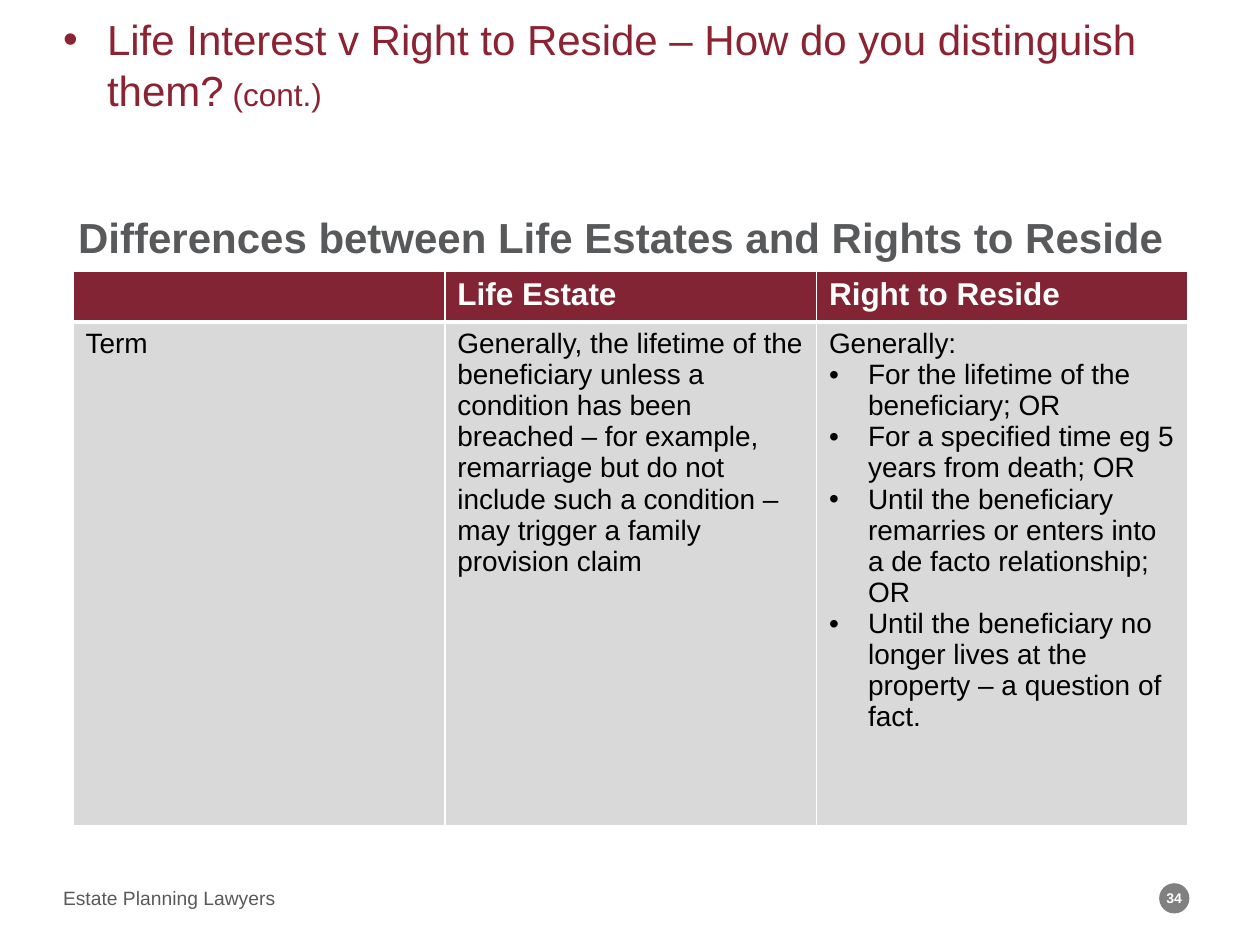
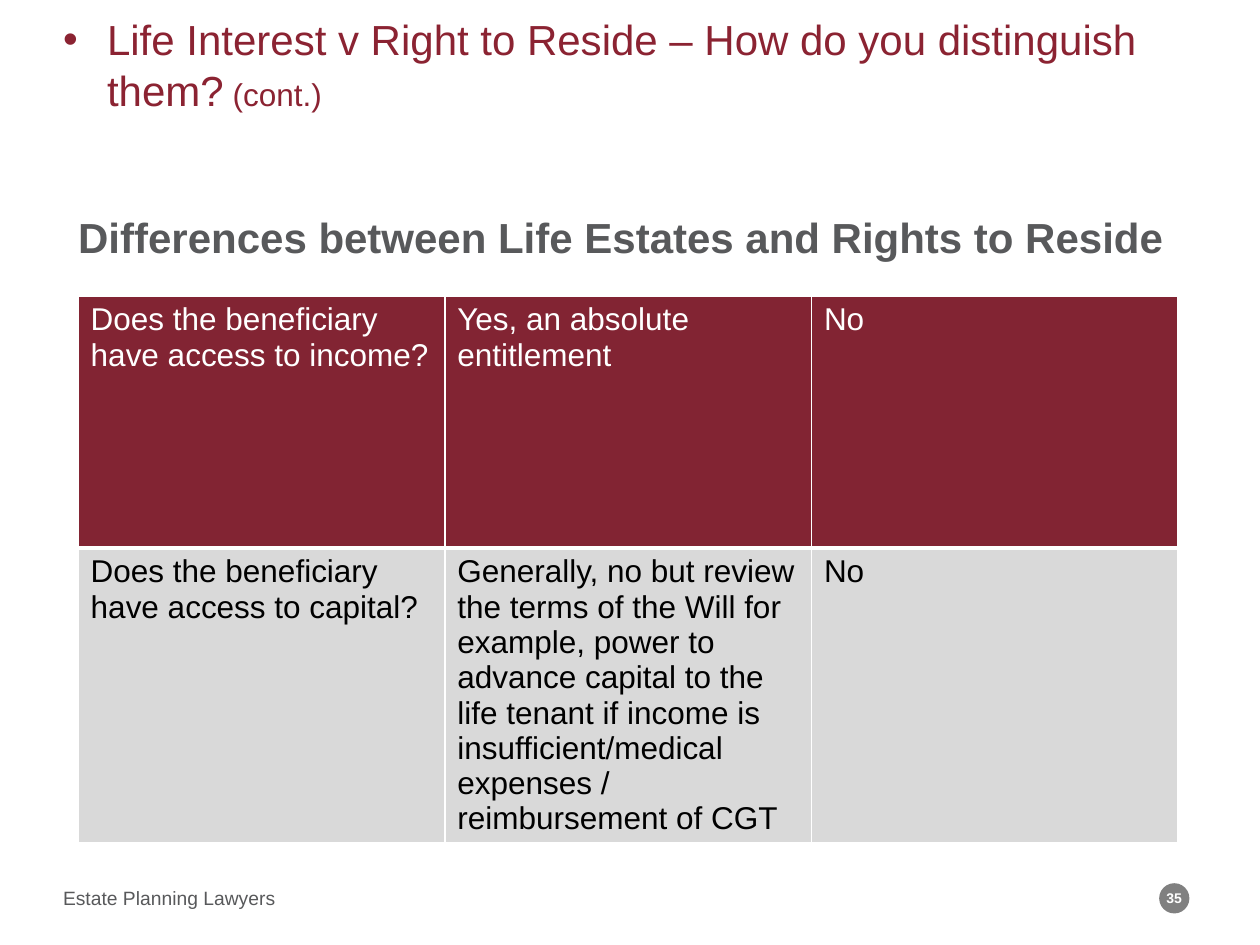
from lxml import etree
from pptx import Presentation
from pptx.dml.color import RGBColor
from pptx.enum.shapes import MSO_SHAPE
from pptx.enum.text import MSO_ANCHOR, MSO_AUTO_SIZE, PP_ALIGN
from pptx.oxml.ns import qn
from pptx.util import Inches, Pt

OVAL = MSO_SHAPE.OVAL
TOP, MIDDLE, BOTTOM = MSO_ANCHOR.TOP, MSO_ANCHOR.MIDDLE, MSO_ANCHOR.BOTTOM
FIXED = MSO_AUTO_SIZE.NONE
LEFT, CENTER = PP_ALIGN.LEFT, PP_ALIGN.CENTER

FONT = "Arial"
INK = {
    "title": "8B2332", "text": "58595B", "badge": "808080",
    "head": "822433", "row": "D9D9D9", "white": "FFFFFF", "black": "000000",
}


def write(frame, lines, size, ink, bold=False, tail=(), left=0, hang=0,
          start=0, align=LEFT, anchor=TOP, inset=0):
    frame.word_wrap = True
    if inset is not None:
        frame.auto_size = FIXED
        frame.vertical_anchor = anchor
        frame.margin_left = frame.margin_right = Inches(inset)
        frame.margin_top = frame.margin_bottom = Inches(inset)
    for at, line in enumerate(lines):
        para = frame.paragraphs[0] if at == 0 else frame.add_paragraph()
        props = para._p.get_or_add_pPr()
        listed = hang and at >= start
        props.set("marL", str(Inches(hang if listed else left)))
        props.set("indent", str(Inches(-hang if listed else 0)))
        if listed:
            etree.SubElement(props, qn("a:buFont")).set("typeface", FONT)
            etree.SubElement(props, qn("a:buChar")).set("char", "•")
        else:
            etree.SubElement(props, qn("a:buNone"))
        para.alignment = align
        para.space_before = Pt(0)
        for words, points in [(line, size), *tail]:
            run = para.add_run()
            run.text = words
            run.font.name = FONT
            run.font.size = Pt(points)
            run.font.bold = bold
            run.font.color.rgb = RGBColor.from_string(INK[ink])


def edge(cell, low):
    props = cell._tc.get_or_add_tcPr()
    for side, width in (("L", 1), ("R", 1), ("T", 1), ("B", low)):
        line = etree.SubElement(props, qn("a:ln" + side), w=str(Pt(width)))
        fill = etree.SubElement(line, qn("a:solidFill"))
        etree.SubElement(fill, qn("a:srgbClr"), val=INK["white"])


pages = [
    {
        "number": "34", "left": 0.58, "top": 2.15, "column": 2.95,
        "heights": (0.35, 4), "sizes": (18, 16), "bold": True,
        "rows": [
            [[], ["Life Estate"], ["Right to Reside"]],
            [
                ["Term"],
                ["Generally, the lifetime of the beneficiary unless a condition "
                 "has been breached – for example, remarriage but do not include "
                 "such a condition – may trigger a family provision claim"],
                ["Generally:",
                 "For the lifetime of the beneficiary; OR",
                 "For a specified time eg 5 years from death; OR",
                 "Until the beneficiary remarries or enters into a de facto "
                 "relationship; OR",
                 "Until the beneficiary no longer lives at the property – "
                 "a question of fact."],
            ],
        ],
    },
    {
        "number": "35", "left": 0.62, "top": 2.35, "column": 2.91,
        "heights": (2, 2.33), "sizes": (18, 18), "bold": False,
        "rows": [
            [["Does the beneficiary have access to income?"],
             ["Yes, an absolute entitlement"], ["No"]],
            [
                ["Does the beneficiary have access to capital?"],
                ["Generally, no but review the terms of the Will for example, "
                 "power to advance capital to the life tenant if income is "
                 "insufficient/medical expenses / reimbursement of CGT"],
                ["No"],
            ],
        ],
    },
]

deck = Presentation()
deck.slide_width, deck.slide_height = Inches(10), Inches(7.5)

for page in pages:
    slide = deck.slides.add_slide(deck.slide_layouts[1])
    shapes = slide.shapes

    foot = shapes.add_textbox(Inches(0.5), Inches(7.03), Inches(4.85), Inches(0.31))
    write(foot.text_frame, ["Estate Planning Lawyers"], 11, "text")

    title, body = shapes.title, slide.placeholders[1]
    for holder, top, height in ((title, 0.23, 0.68), (body, 1.68, 4.82)):
        holder.left, holder.top = Inches(0.5), Inches(top)
        holder.width, holder.height = Inches(9), Inches(height)
    write(title.text_frame,
          ["Life Interest v Right to Reside – How do you distinguish them?"],
          24, "title", tail=[(" (cont.)", 18)], hang=0.35, anchor=BOTTOM)
    write(body.text_frame,
          ["Differences between Life Estates and Rights to Reside"],
          24, "text", bold=True, left=0.12)

    badge = shapes.add_shape(OVAL, Inches(9.2), Inches(7.01), Inches(0.24), Inches(0.24))
    badge.shadow.inherit = False
    badge.fill.solid()
    badge.fill.fore_color.rgb = RGBColor.from_string(INK["badge"])
    badge.line.fill.background()
    write(badge.text_frame, [page["number"]], 8, "white", bold=True,
          align=CENTER, anchor=MIDDLE)

    rows = page["rows"]
    grid = shapes.add_table(
        len(rows), len(rows[0]), Inches(page["left"]), Inches(page["top"]),
        Inches(page["column"] * len(rows[0])), Inches(sum(page["heights"]))).table
    for column in grid.columns:
        column.width = Inches(page["column"])
    for y, row in enumerate(rows):
        grid.rows[y].height = Inches(page["heights"][y])
        head = y == 0
        for x, lines in enumerate(row):
            cell = grid.cell(y, x)
            edge(cell, 3 if head else 1)
            cell.fill.solid()
            cell.fill.fore_color.rgb = RGBColor.from_string(INK["head" if head else "row"])
            write(cell.text_frame, lines, page["sizes"][y],
                  "white" if head else "black", bold=head and page["bold"],
                  hang=0.31 if len(lines) > 1 else 0, start=1, inset=None)

deck.save("out.pptx")
